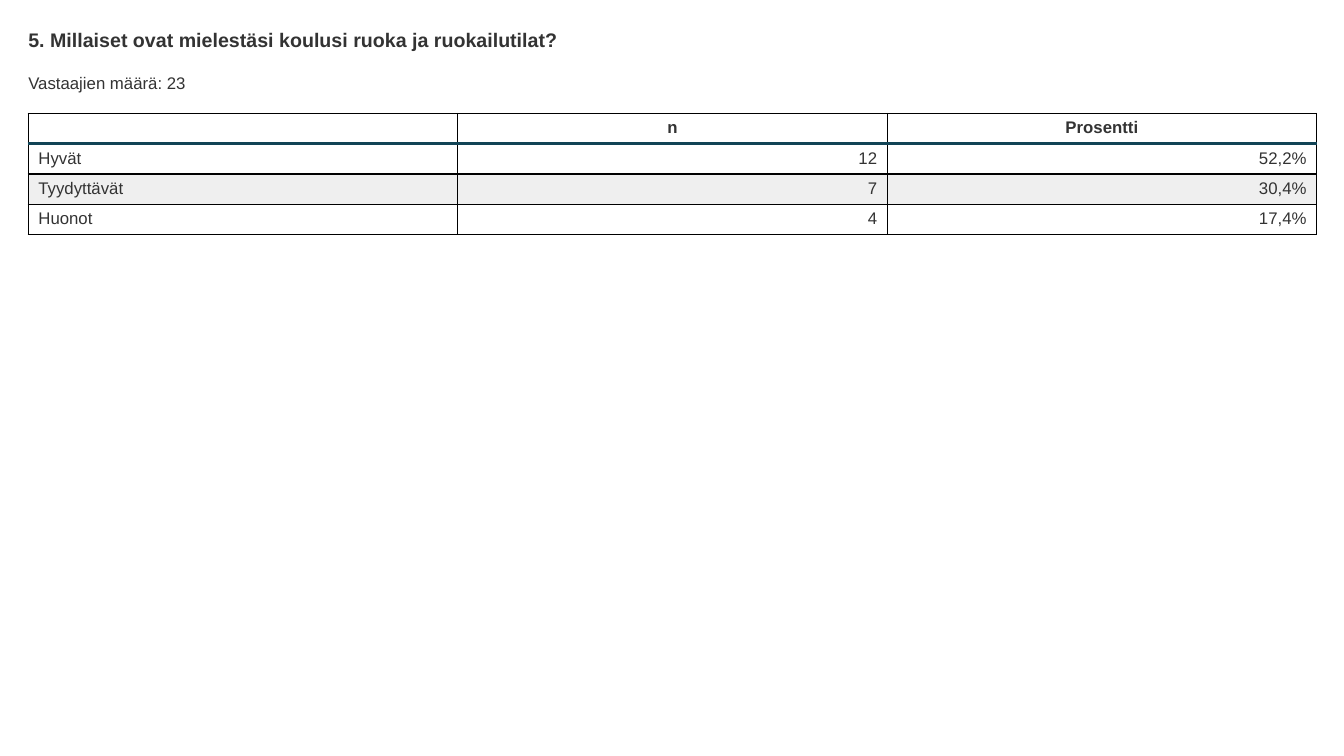
from lxml.etree import SubElement as Sub
from pptx import Presentation
from pptx.dml.color import RGBColor as Rgb
from pptx.enum.text import MSO_ANCHOR as Anchor, PP_ALIGN as Align
from pptx.oxml.ns import qn
from pptx.util import Pt

PX = 9525
HUES = {"text": "333333", "grid": "000000", "rule": "124456",
        "band": "EFEFEF", "plain": "FFFFFF"}
HEAD = ("", "n", "Prosentti")
ROWS = (("Hyvät", "12", "52,2%"),
        ("Tyydyttävät", "7", "30,4%"),
        ("Huonot", "4", "17,4%"))


def hue(name):
    return Rgb.from_string(HUES[name])


def style(para, size, bold, align):
    para.alignment = align
    font = para.font
    font.name, font.size, font.bold = "Arial", Pt(size), bold
    font.color.rgb = hue("text")


def write(shape, box, text, size, bold=False):
    shape.left, shape.top, shape.width, shape.height = (v * PX for v in box)
    frame = shape.text_frame
    frame.word_wrap = True
    frame.vertical_anchor = Anchor.TOP
    frame.margin_left = frame.margin_right = 0
    frame.margin_top = frame.margin_bottom = 0
    frame.text = text
    style(frame.paragraphs[0], size, bold, Align.LEFT)


def edge(cell, side, name, width):
    line = Sub(cell._tc.get_or_add_tcPr(), qn("a:ln" + side), w=str(Pt(width)))
    fill = Sub(line, qn("a:solidFill"))
    Sub(fill, qn("a:srgbClr"), val=HUES[name])


def frame_cell(cell, row):
    """Draw the four edges, with the thick rule under the header."""
    for side in "LRTB":
        rule = (row, side) in ((0, "B"), (1, "T"))
        edge(cell, side, *(("rule", 2) if rule else ("grid", 1)))


def fill_table(slide, box):
    data = (HEAD, *ROWS)
    table = slide.shapes.add_table(len(data), len(HEAD),
                                   *(v * PX for v in box)).table
    table.first_row = table.horz_banding = False
    for r, row in enumerate(data):
        for c, text in enumerate(row):
            cell = table.cell(r, c)
            frame_cell(cell, r)
            cell.fill.solid()
            cell.fill.fore_color.rgb = hue("band" if r == 2 else "plain")
            cell.text = text
            align = Align.LEFT if c == 0 else Align.RIGHT if r else Align.CENTER
            style(cell.text_frame.paragraphs[0], 12, r == 0, align)


def build(slide, box):
    x, y, w = box
    write(slide.shapes.title, (x, y, w, 22), HEAD_TEXT, 14, True)
    count = slide.shapes.add_textbox(0, 0, 0, 0)
    write(count, (x, y + 42, w, 19), "Vastaajien määrä: 23", 12)
    fill_table(slide, (x, y + 81, w, 28 * (len(ROWS) + 1)))


HEAD_TEXT = "5. Millaiset ovat mielestäsi koulusi ruoka ja ruokailutilat?"


def main():
    deck = Presentation()
    deck.slide_width, deck.slide_height = 1280 * PX, 720 * PX
    build(deck.slides.add_slide(deck.slide_layouts[5]), (27, 27, 1227))
    deck.save("out.pptx")


if __name__ == "__main__":
    main()
